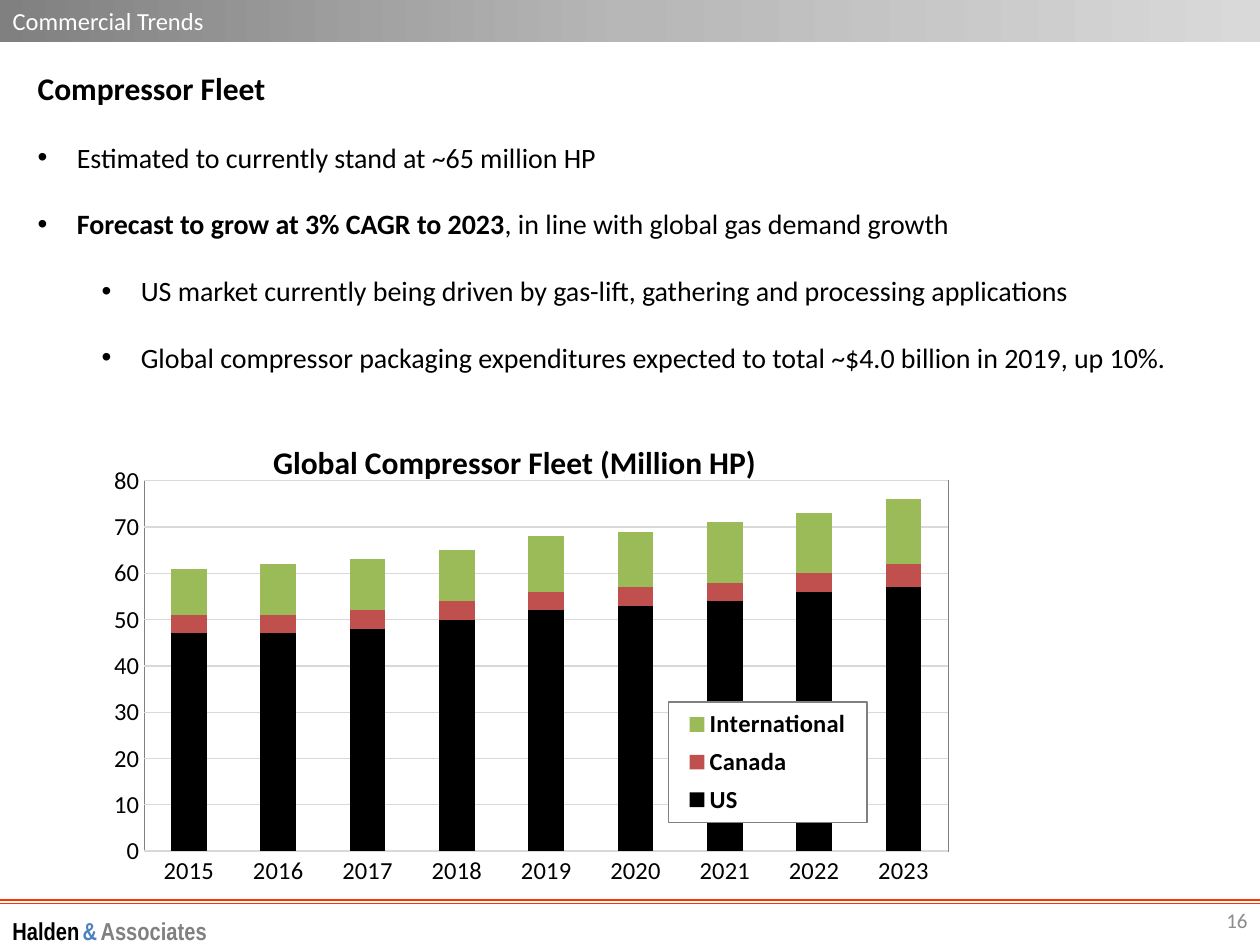
from copy import deepcopy
from dataclasses import dataclass
from typing import Any

from lxml import etree
from pptx import Presentation
from pptx.chart.data import CategoryChartData
from pptx.dml.color import RGBColor
from pptx.enum.chart import XL_CHART_TYPE as ChartType, XL_LEGEND_POSITION as LegendPosition
from pptx.enum.chart import XL_TICK_MARK as TickMark
from pptx.enum.shapes import MSO_CONNECTOR as Connector
from pptx.enum.text import MSO_ANCHOR as Anchor, MSO_AUTO_SIZE as AutoSize, PP_ALIGN as Align
from pptx.oxml import parse_xml
from pptx.oxml.ns import nsdecls, qn
from pptx.util import Cm, Pt

BLACK, GREY, PALE_GREY = "000000", "808080", "D9D9D9"
NO_FILL = "<a:noFill/>"
WHITE_FILL = '<a:solidFill><a:srgbClr val="FFFFFF"/></a:solidFill>'


@dataclass
class Box:
    left: float
    top: float
    width: float
    height: float

    def lengths(self) -> tuple:
        return Cm(self.left), Cm(self.top), Cm(self.width), Cm(self.height)


@dataclass
class Run:
    text: str
    size: float = 16
    bold: bool = False
    color: str = BLACK
    font: str = "Calibri"


@dataclass
class Bullet:
    indent: float
    runs: list[Run]


@dataclass
class Series:
    name: str
    values: list[int]
    color: str


HEADING = Run("Compressor Fleet", 18, True)
BULLETS = [
    Bullet(0.79, [Run("Estimated to currently stand at ~65 million HP")]),
    Bullet(0.79, [Run("Forecast to grow at 3% CAGR to 2023", bold=True),
                  Run(", in line with global gas demand growth")]),
    Bullet(2.08, [Run("US market currently being driven by gas-lift, "
                      "gathering and processing applications")]),
    Bullet(2.08, [Run("Global compressor packaging expenditures expected to total "
                      "~$4.0 billion in 2019, up 10%.")]),
]
NARROW = "Arial Narrow"
FIRM = [
    Run("Halden", 14, True, BLACK, NARROW), Run(" ", 8, False, BLACK, NARROW),
    Run("&", 14, True, "4F81BD", NARROW), Run(" ", 8, False, BLACK, NARROW),
    Run("Associates", 14, True, GREY, NARROW),
]
FLEET = [
    Series("US", [47, 47, 48, 50, 52, 53, 54, 56, 57], BLACK),
    Series("Canada", [4, 4, 4, 4, 4, 4, 4, 4, 5], "C0504D"),
    Series("International", [10, 11, 11, 11, 12, 12, 13, 13, 14], "9BBB59"),
]


def rgb(value: str) -> RGBColor:
    return RGBColor.from_string(value)


def set_attributes(target: Any, values: dict) -> None:
    for name, value in values.items():
        setattr(target, name, value)


def format_font(font: Any, size: float, bold: bool = False,
                color: str = BLACK, name: str = "Calibri") -> None:
    set_attributes(font, {"size": Pt(size), "bold": bold, "name": name})
    font.color.rgb = rgb(color)


def format_line(line: Any, color: str) -> None:
    line.color.rgb = rgb(color)
    line.width = Pt(0.75)


def add_runs(paragraph: Any, runs: list[Run]) -> None:
    for item in runs:
        run = paragraph.add_run()
        run.text = item.text
        format_font(run.font, item.size, item.bold, item.color, item.font)


def add_text(slide: Any, box: Box, runs: list[Run],
             anchor: Any = Anchor.MIDDLE, align: Any = Align.LEFT) -> Any:
    frame = slide.shapes.add_textbox(*box.lengths()).text_frame
    set_attributes(frame, {"word_wrap": True, "vertical_anchor": anchor})
    frame.paragraphs[0].alignment = align
    add_runs(frame.paragraphs[0], runs)
    return frame


def add_bullet(frame: Any, bullet: Bullet) -> None:
    paragraph = frame.add_paragraph()
    paragraph.space_before = Pt(19)
    properties = paragraph._p.get_or_add_pPr()
    properties.set("marL", str(Cm(bullet.indent)))
    properties.set("indent", str(-Cm(0.79)))
    etree.SubElement(properties, qn("a:buFont")).set("typeface", "Arial")
    etree.SubElement(properties, qn("a:buChar")).set("char", "•")
    add_runs(paragraph, bullet.runs)


def add_rule(slide: Any, top: float) -> None:
    rule = slide.shapes.add_connector(Connector.STRAIGHT, 0, Cm(top), Cm(25.4), Cm(top))
    format_line(rule.line, "FF3300")
    etree.SubElement(rule._element.spPr, qn("a:effectLst"))


def format_title(title: Any) -> None:
    set_attributes(title, dict(zip(("left", "top", "width", "height"),
                                   Box(0, 0, 25.4, 0.84).lengths())))
    set_attributes(title.text_frame, {"auto_size": AutoSize.NONE, "word_wrap": True,
                                      "vertical_anchor": Anchor.MIDDLE})
    paragraph = title.text_frame.paragraphs[0]
    paragraph.alignment = Align.LEFT
    add_runs(paragraph, [Run("Commercial Trends", 14, False, "FFFFFF")])
    # Three-stop grey gradient, left to right
    title.fill.gradient()
    title.fill.gradient_angle = 0
    stops = title._element.spPr.find(".//" + qn("a:gsLst"))
    stops.append(deepcopy(stops[0]))
    colors = (GREY, "B7B7B7", PALE_GREY)
    for stop, position, color in zip(title.fill.gradient_stops, (0, 0.5, 1), colors):
        stop.position = position
        stop.color.rgb = rgb(color)


def chart_layout(x: float, y: float, width: float, height: float, inner: bool = False) -> Any:
    target = '<c:layoutTarget val="inner"/>' if inner else ""
    return parse_xml(
        f'<c:layout {nsdecls("c")}><c:manualLayout>{target}'
        '<c:xMode val="edge"/><c:yMode val="edge"/>'
        f'<c:x val="{x}"/><c:y val="{y}"/><c:w val="{width}"/><c:h val="{height}"/>'
        '</c:manualLayout></c:layout>')


def outlined(fill: str) -> Any:
    return parse_xml(
        f'<c:spPr {nsdecls("c", "a")}>{fill}<a:ln w="9525"><a:solidFill>'
        f'<a:srgbClr val="{GREY}"/></a:solidFill></a:ln></c:spPr>')


def remove_layout(element: Any) -> None:
    for layout in element.findall(qn("c:layout")):
        element.remove(layout)


def add_fleet_chart(slide: Any, box: Box) -> None:
    data = CategoryChartData(number_format="#,##0")
    data.categories = [str(year) for year in range(2015, 2024)]
    for series in FLEET:
        data.add_series(series.name, series.values)
    chart = slide.shapes.add_chart(ChartType.COLUMN_STACKED, *box.lengths(), data).chart
    format_font(chart.font, 10, True)

    # Title and bars
    chart.has_title = True
    add_runs(chart.chart_title.text_frame.paragraphs[0],
             [Run("Global Compressor Fleet (Million HP)", 18, True)])
    plot = chart.plots[0]
    set_attributes(plot, {"gap_width": 150, "overlap": 100, "vary_by_categories": False})
    for bars, series in zip(plot.series, FLEET):
        bars.format.fill.solid()
        bars.format.fill.fore_color.rgb = rgb(series.color)

    # Axes
    for axis in (chart.category_axis, chart.value_axis):
        set_attributes(axis, {"major_tick_mark": TickMark.NONE, "minor_tick_mark": TickMark.NONE})
        format_font(axis.tick_labels.font, 14)
    format_line(chart.category_axis.format.line, PALE_GREY)
    set_attributes(chart.value_axis, {"minimum_scale": 0, "maximum_scale": 80, "major_unit": 10})
    chart.value_axis.format.line.fill.background()
    format_line(chart.value_axis.major_gridlines.format.line, PALE_GREY)

    # Outlined plot area and a legend that lies over it
    chart.has_legend = True
    set_attributes(chart.legend, {"position": LegendPosition.RIGHT, "include_in_layout": False})
    format_font(chart.legend.font, 14, True)
    area = chart._chartSpace.find(".//" + qn("c:plotArea"))
    remove_layout(area)
    area.insert(0, chart_layout(0.09, 0.13, 0.89, 0.77, inner=True))
    area.append(outlined(NO_FILL))
    legend = chart._chartSpace.find(".//" + qn("c:legend"))
    remove_layout(legend)
    legend.find(qn("c:legendPos")).addnext(chart_layout(0.67, 0.59, 0.22, 0.25))
    legend.find(qn("c:txPr")).addprevious(outlined(WHITE_FILL))


def main() -> None:
    presentation = Presentation()
    set_attributes(presentation, {"slide_width": Cm(25.4), "slide_height": Cm(19.05)})
    slide = presentation.slides.add_slide(presentation.slide_layouts[5])

    # Header and footer
    format_title(slide.shapes.title)
    for top in (18.21, 18.14):
        add_rule(slide, top)
    add_text(slide, Box(19.48, 18.03, 5.92, 1.02), [Run("16", 12, False, "8C8C8C")],
             align=Align.RIGHT)
    add_text(slide, Box(0, 18.42, 11, 0.69), FIRM)

    # Body
    body = add_text(slide, Box(0.51, 1.27, 24.26, 6.55), [HEADING], Anchor.TOP)
    for bullet in BULLETS:
        add_bullet(body, bullet)
    add_fleet_chart(slide, Box(1.27, 8.43, 18.21, 9.7))
    presentation.save("out.pptx")


if __name__ == "__main__":
    main()
